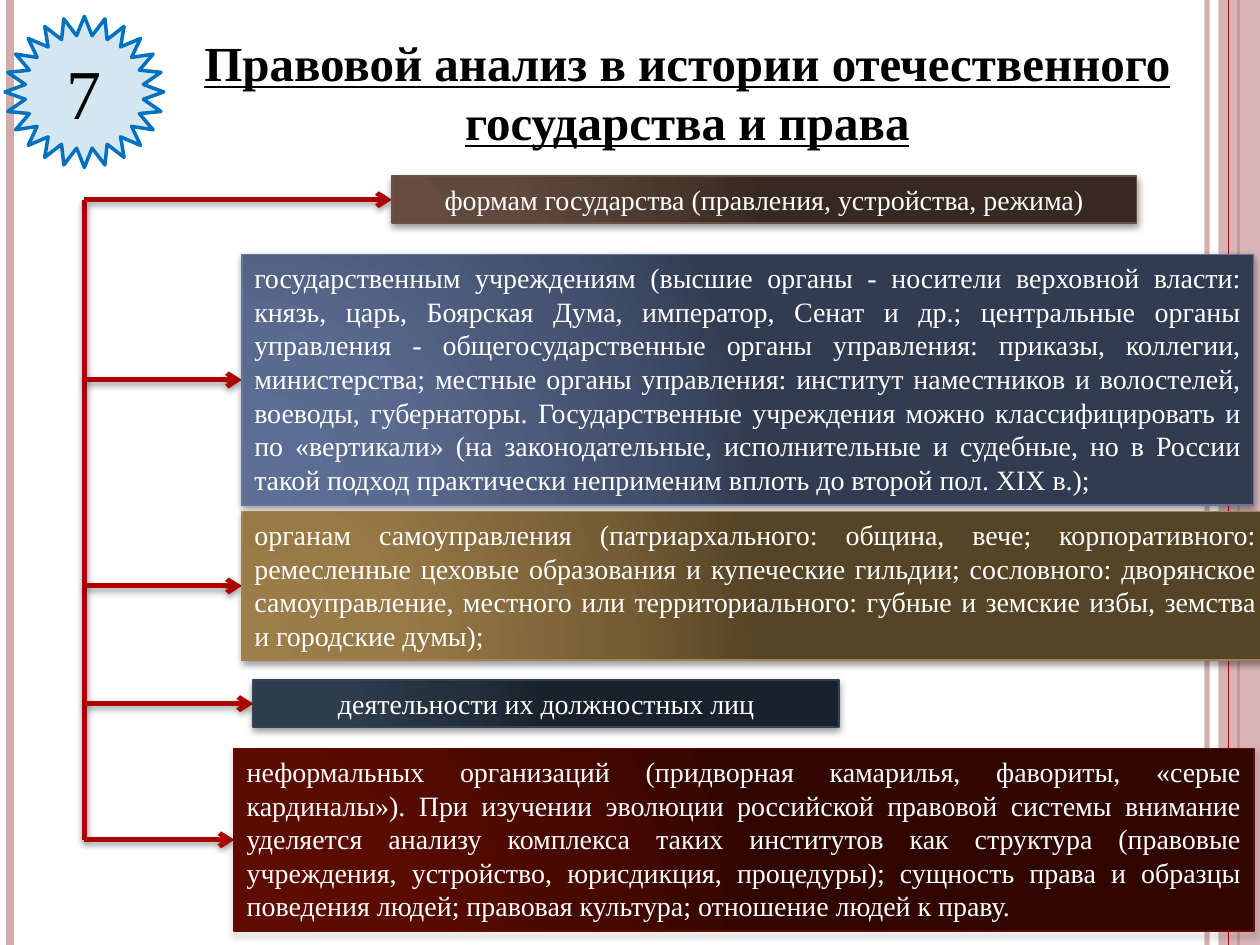
"""Build the slide on legal analysis in the history of the Russian state and law."""
from dataclasses import dataclass

from lxml import etree
from pptx import Presentation
from pptx.dml.color import RGBColor
from pptx.enum.shapes import MSO_CONNECTOR, MSO_SHAPE
from pptx.enum.text import MSO_ANCHOR, MSO_AUTO_SIZE, PP_ALIGN
from pptx.oxml.ns import qn
from pptx.util import Inches, Pt

STRAIGHT = MSO_CONNECTOR.STRAIGHT
RECTANGLE, STAR = MSO_SHAPE.RECTANGLE, MSO_SHAPE.STAR_24_POINT
TOP, MIDDLE = MSO_ANCHOR.TOP, MSO_ANCHOR.MIDDLE
GROW, FIXED = MSO_AUTO_SIZE.SHAPE_TO_FIT_TEXT, MSO_AUTO_SIZE.NONE
CENTER, JUSTIFY = PP_ALIGN.CENTER, PP_ALIGN.JUSTIFY
COLUMNS, ROWS = 100, 75
TITLE_ONLY = 5


@dataclass(frozen=True)
class Theme:
    """Colours, font and type sizes of the slide."""
    font: str = "Times New Roman"
    ink: str = "000000"
    paper: str = "FFFFFF"
    red: str = "AD0101"
    pink: str = "D3ABAB"
    badge_fill: str = "D4E7F0"
    badge_edge: str = "0070C0"
    title_size: int = 28
    badge_size: int = 40
    body_size: int = 16
    arrow_width: float = 2.75
    brown: tuple = ("654C3F", "614A3D", "4A372D", "372921", "685044")
    blue: tuple = ("5E6F95", "5A6B90", "43506D", "313B51", "65769A")
    gold: tuple = ("9D7E49", "987A47", "745C33", "564426", "A18351")
    slate: tuple = ("2F4051", "2E3D4E", "222E3B", "19222C", "334353")
    maroon: tuple = ("5E0B00", "5B0B00", "440800", "320600", "620C00")


def add_xml(parent, tag, **attributes):
    """Append a drawing element and return it."""
    values = {key: str(value) for key, value in attributes.items()}
    return etree.SubElement(parent, qn(f"a:{tag}"), values)


class SlideBuilder:
    """Draws styled elements on the current slide, placed by grid columns and rows."""

    def __init__(self, deck, theme):
        self.theme = theme
        self.slide = deck.slides.add_slide(deck.slide_layouts[TITLE_ONLY])
        self.column = deck.slide_width / COLUMNS
        self.row = deck.slide_height / ROWS

    def grid(self, *lengths):
        """Turn alternating columns and rows into slide lengths."""
        units = (self.column, self.row) * 2
        return [round(length * unit) for length, unit in zip(lengths, units)]

    def set_words(self, frame, words, size, color, align, anchor=TOP, fit=FIXED):
        """Set one paragraph of styled text and return its font."""
        frame.text = words
        frame.word_wrap = True
        frame.auto_size = fit
        frame.vertical_anchor = anchor
        paragraph = frame.paragraphs[0]
        paragraph.alignment = align
        font = paragraph.font
        font.name, font.size = self.theme.font, Pt(size)
        font.color.rgb = RGBColor.from_string(color)
        return font

    def opacity(self, fill_xml, percent):
        """Make a solid fill partly transparent."""
        add_xml(fill_xml.find(qn("a:srgbClr")), "alpha", val=percent * 1000)

    def drop_shadow(self, properties):
        """Add the soft shadow that falls straight down."""
        effects = add_xml(properties, "effectLst")
        shadow = add_xml(effects, "outerShdw", blurRad=Pt(4), dist=Pt(1.6),
                         dir=90 * 60000, rotWithShape=0)
        color = add_xml(shadow, "srgbClr", val=self.theme.ink)
        add_xml(color, "alpha", val=42000)

    def title(self, words, place):
        """Place and format the title."""
        heading = self.slide.shapes.title
        heading.left, heading.top, heading.width, heading.height = self.grid(*place)
        font = self.set_words(heading.text_frame, words, self.theme.title_size,
                              self.theme.ink, CENTER)
        font.bold = font.underline = True

    def line(self, start, end, color, width, opacity=100, arrow=False, shadow=False):
        """Draw a straight line, optionally with an arrowhead or shadow."""
        stroke = self.slide.shapes.add_connector(STRAIGHT, *self.grid(*start, *end))
        stroke.line.color.rgb = RGBColor.from_string(color)
        stroke.line.width = Pt(width)
        properties = stroke._element.spPr
        outline = properties.find(qn("a:ln"))
        if opacity < 100:
            self.opacity(outline.find(qn("a:solidFill")), opacity)
        if arrow:
            add_xml(outline, "tailEnd", type="arrow")
        if shadow:
            self.drop_shadow(properties)
        else:
            add_xml(properties, "effectLst")

    def rail(self, column, color, width, opacity=100):
        """Draw a decorative line down the whole slide."""
        self.line((column, 0), (column, ROWS), color, width, opacity)

    def band(self, place, color, opacity):
        """Draw a translucent band without an outline."""
        strip = self.slide.shapes.add_shape(RECTANGLE, *self.grid(*place))
        strip.shadow.inherit = False
        strip.fill.solid()
        strip.fill.fore_color.rgb = RGBColor.from_string(color)
        strip.line.fill.background()
        self.opacity(strip._element.spPr.find(qn("a:solidFill")), opacity)

    def badge(self, words, place):
        """Draw the numbered star."""
        star = self.slide.shapes.add_shape(STAR, *self.grid(*place))
        star.shadow.inherit = False
        star.fill.solid()
        star.fill.fore_color.rgb = RGBColor.from_string(self.theme.badge_fill)
        star.line.color.rgb = RGBColor.from_string(self.theme.badge_edge)
        star.line.width = Pt(2)
        self.set_words(star.text_frame, words, self.theme.badge_size,
                       self.theme.ink, CENTER, MIDDLE)

    def box(self, words, place, palette, align):
        """Draw a text box with a radial gradient and a shadow."""
        *shades, edge = palette
        panel = self.slide.shapes.add_shape(RECTANGLE, *self.grid(*place))
        panel.fill.gradient()
        panel.line.color.rgb = RGBColor.from_string(edge)
        panel.line.width = Pt(1)
        properties = panel._element.spPr
        gradient = properties.find(qn("a:gradFill"))
        for child in list(gradient):
            gradient.remove(child)
        stops = add_xml(gradient, "gsLst")
        for position, shade in zip((0, 30, 75, 100), shades):
            stop = add_xml(stops, "gs", pos=position * 1000)
            add_xml(stop, "srgbClr", val=shade)
        radial = add_xml(gradient, "path", path="circle")
        add_xml(radial, "fillToRect", l=5000, t=100000, r=120000, b=10000)
        self.drop_shadow(properties)
        self.set_words(panel.text_frame, words, self.theme.body_size,
                       self.theme.paper, align, fit=GROW)

    def branches(self, places, trunk):
        """Join a trunk to the middle of each place's left side."""
        style = dict(color=self.theme.red, width=self.theme.arrow_width, shadow=True)
        ends = [(left, top + height / 2) for left, top, _, height in places]
        self.line((trunk, ends[0][1]), (trunk, ends[-1][1]), **style)
        for end in ends:
            self.line((trunk, end[1]), end, arrow=True, **style)


def main():
    """Compose and save the slide."""
    deck = Presentation()
    deck.slide_width, deck.slide_height = Inches(10), Inches(7.5)
    theme = Theme()
    page = SlideBuilder(deck, theme)
    page.rail(95.8, theme.pink, 3, 93)
    page.rail(0.8, theme.pink, 4.5)
    page.rail(98.3, theme.red, 1.5)
    page.band((96.7, 0, 3.3, ROWS), theme.pink, 87)
    page.rail(97.5, theme.red, 0.75)
    page.badge("7", (0.4, 1.3, 12.6, 12))
    page.title("Правовой анализ в истории отечественного государства и права",
               (12.8, 2.1, 83.5, 10.4))
    subjects = [
        ("формам государства (правления, устройства, режима)",
         (31.1, 14, 59.1, 3.7), theme.brown, CENTER),
        ("государственным учреждениям (высшие органы - носители верховной власти: князь, царь, "
         "Боярская Дума, император, Сенат и др.; центральные органы управления - "
         "общегосударственные органы управления: приказы, коллегии, министерства; местные органы "
         "управления: институт наместников и волостелей, воеводы, губернаторы. Государственные "
         "учреждения можно классифицировать и по «вертикали» (на законодательные, исполнительные "
         "и судебные, но в России такой подход практически неприменим вплоть до второй пол. "
         "XIX в.);", (19.2, 20.2, 80.3, 19.9), theme.blue, JUSTIFY),
        ("органам самоуправления (патриархального: община, вече; корпоративного: ремесленные "
         "цеховые образования и купеческие гильдии; сословного: дворянское самоуправление, "
         "местного или территориального: губные и земские избы, земства и городские думы);",
         (19.2, 40.6, 81.5, 11.8), theme.gold, JUSTIFY),
        ("деятельности их должностных лиц", (20.1, 54, 46.5, 3.7), theme.slate, CENTER),
        ("неформальных организаций (придворная камарилья, фавориты, «серые кардиналы»). При "
         "изучении эволюции российской правовой системы внимание уделяется анализу комплекса "
         "таких институтов как структура (правовые учреждения, устройство, юрисдикция, "
         "процедуры); сущность права и образцы поведения людей; правовая культура; отношение "
         "людей к праву.", (18.6, 59.4, 80.9, 14.5), theme.maroon, JUSTIFY),
    ]
    page.branches([place for _, place, _, _ in subjects], trunk=6.7)
    for subject in subjects:
        page.box(*subject)
    deck.save("out.pptx")


if __name__ == "__main__":
    main()
